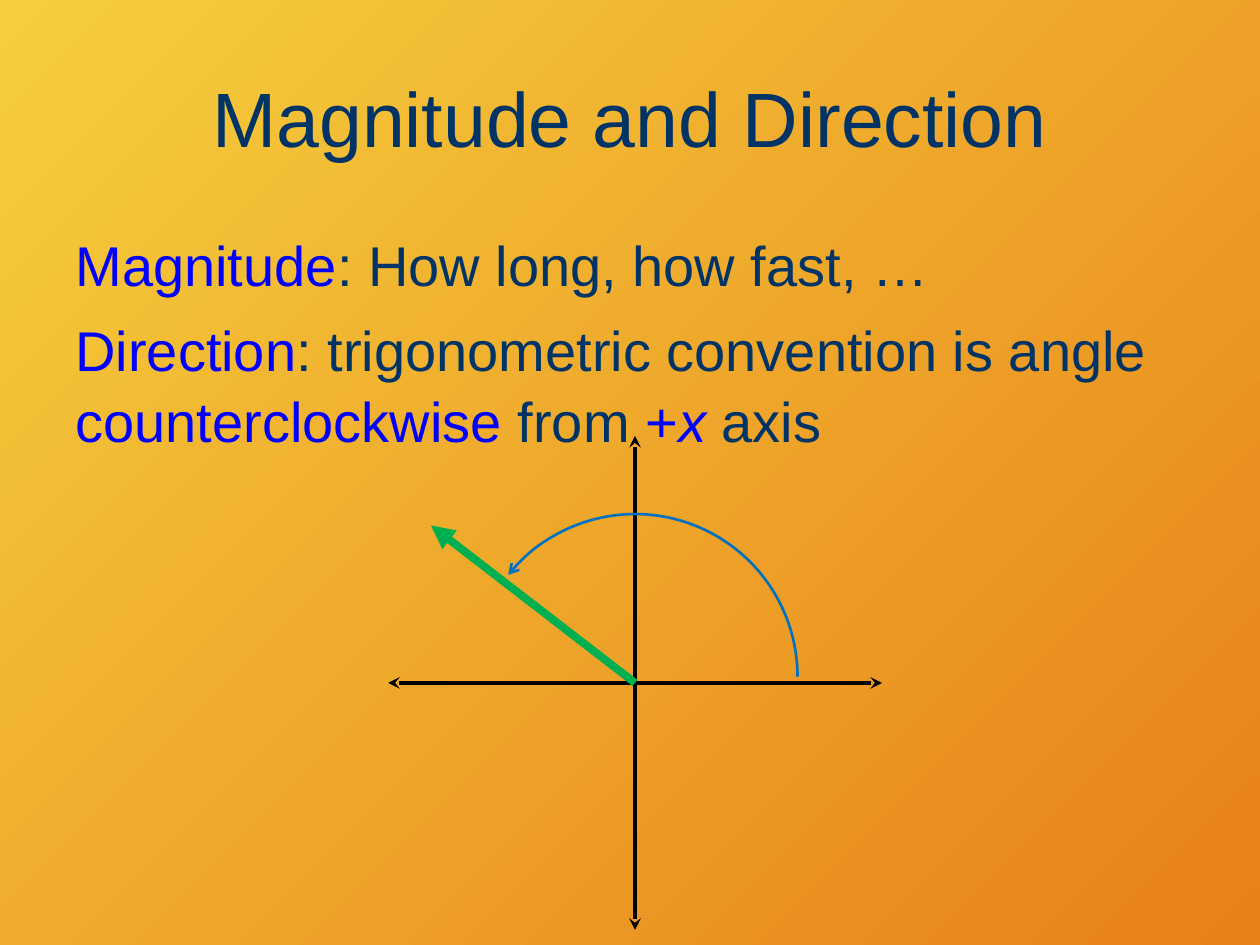
from lxml import etree
from pptx import Presentation
from pptx.dml.color import RGBColor
from pptx.enum.shapes import MSO_CONNECTOR, MSO_SHAPE
from pptx.enum.text import MSO_ANCHOR, PP_ALIGN
from pptx.oxml.ns import qn
from pptx.util import Inches, Pt

NAVY, BLUE, BLACK = "003366", "0000FF", "000000"
GREEN, ARC_BLUE = "00B050", "0070C0"


def rgb(value):
    return RGBColor.from_string(value)


def add_run(p, text, size=32, color=NAVY, italic=False):
    r = p.add_run()
    r.text = text
    r.font.name = "Arial"
    r.font.size = Pt(size)
    r.font.color.rgb = rgb(color)
    r.font.italic = italic


def style_line(sp, color, width, head=None, tail=None):
    """Format the line; head is the arrowhead at its start, tail at its end."""
    sp.line.color.rgb = rgb(color)
    sp.line.width = Pt(width)
    ln = sp.line._get_or_add_ln()
    for tag, kind in (("a:headEnd", head), ("a:tailEnd", tail)):
        if kind:
            etree.SubElement(ln, qn(tag)).set("type", kind)


def set_background(s, start, end):
    fill = s.background.fill
    fill.gradient()
    fill.gradient_angle = 315
    for stop, color in zip(fill.gradient_stops, (start, end)):
        stop.color.rgb = rgb(color)


def set_title(s, text, left, top, width, height):
    sp = s.shapes.title
    sp.left, sp.top = Inches(left), Inches(top)
    sp.width, sp.height = Inches(width), Inches(height)
    tf = sp.text_frame
    tf.vertical_anchor = MSO_ANCHOR.MIDDLE
    p = tf.paragraphs[0]
    p.alignment = PP_ALIGN.CENTER
    add_run(p, text, size=44)


def add_definition(s, runs, left, top, width, height):
    sp = s.shapes.add_textbox(Inches(left), Inches(top), Inches(width), Inches(height))
    tf = sp.text_frame
    tf.word_wrap = True
    p = tf.paragraphs[0]
    p.line_spacing = 1.06
    for text, options in runs:
        add_run(p, text, **options)


def add_line(s, x1, y1, x2, y2, color, width, head=None, tail=None):
    c = s.shapes.add_connector(MSO_CONNECTOR.STRAIGHT, Inches(x1), Inches(y1),
                               Inches(x2), Inches(y2))
    style_line(c, color, width, head, tail)
    etree.SubElement(c._element.spPr, qn("a:effectLst"))


def add_diagram(s, left, top, size):
    """Draw the axes, the vector and its angle in a square box."""
    half = size / 2
    cx, cy = left + half, top + half
    for dx, dy in ((half, 0), (0, -half)):
        add_line(s, cx - dx, cy - dy, cx + dx, cy + dy, BLACK, 2.25,
                 head="stealth", tail="stealth")
    add_line(s, cx, cy, cx - 1.62, cy - 1.25, GREEN, 4.5, tail="triangle")

    radius = 1.29
    arc = s.shapes.add_shape(MSO_SHAPE.ARC, Inches(cx - radius), Inches(cy - 0.05 - radius),
                             Inches(2 * radius), Inches(2 * radius))
    arc.adjustments[0], arc.adjustments[1] = 131.24, 0
    arc.fill.background()
    style_line(arc, ARC_BLUE, 1.5, head="arrow")
    arc.shadow.inherit = False


def main():
    prs = Presentation()
    prs.slide_width, prs.slide_height = Inches(10), Inches(7.5)
    s = prs.slides.add_slide(prs.slide_layouts[5])
    key = {"color": BLUE}
    set_background(s, "F5CE3D", "E88018")
    set_title(s, "Magnitude and Direction", 0.5, 0.3, 9, 1.25)
    add_definition(s, [("Magnitude", key), (": How long, how fast, …", {})],
                   0.5, 1.75, 9, 0.84)
    add_diagram(s, 3.08, 3.46, 3.92)
    add_definition(s, [("Direction", key), (": trigonometric convention is angle ", {}),
                       ("counterclockwise", key), (" from ", {}), ("+", key),
                       ("x", {"color": BLUE, "italic": True}), (" axis", {})],
                   0.5, 2.42, 9, 1.17)
    prs.save("out.pptx")


if __name__ == "__main__":
    main()
